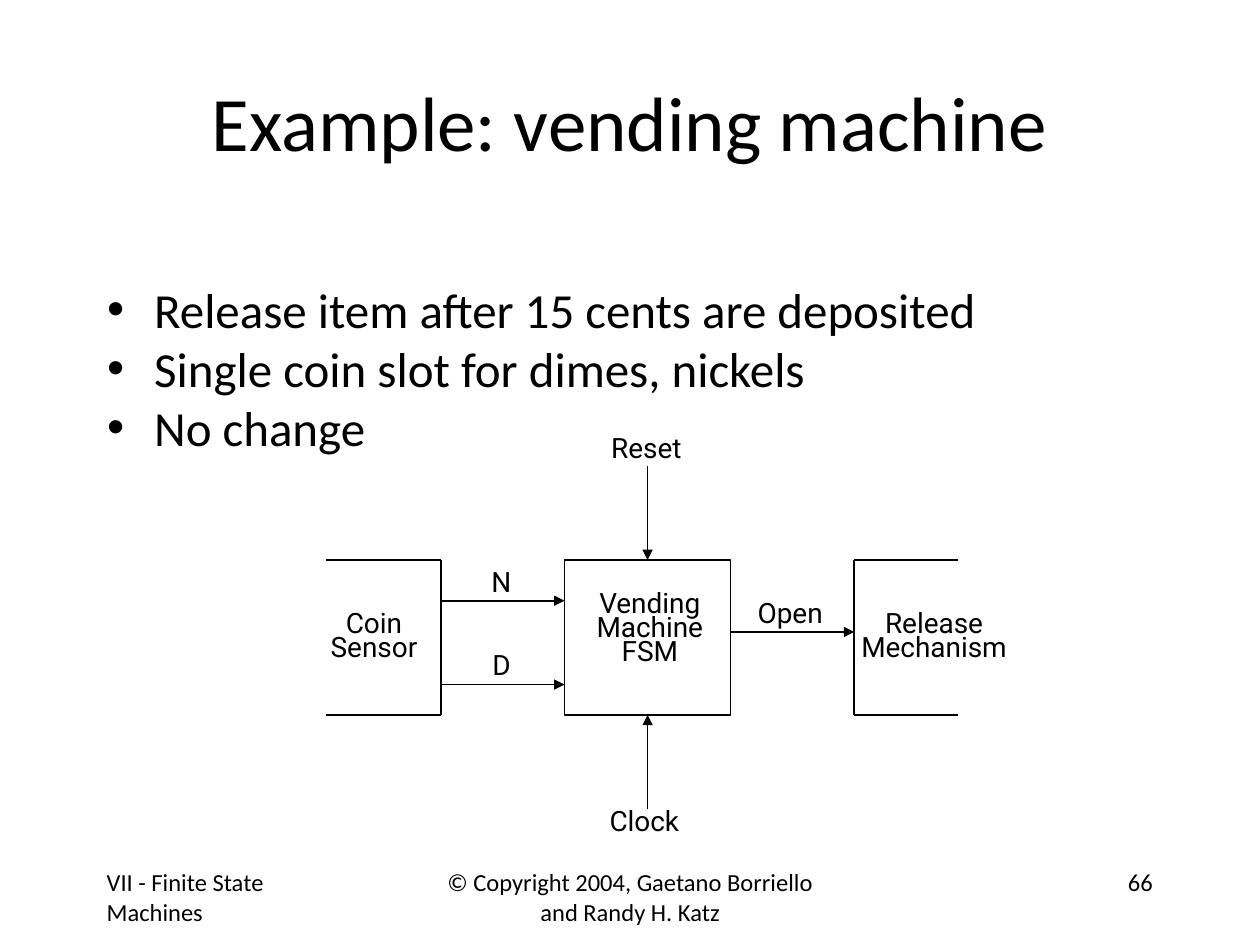
from lxml.etree import SubElement
from pptx import Presentation
from pptx.dml.color import RGBColor
from pptx.enum.shapes import MSO_CONNECTOR, MSO_SHAPE
from pptx.enum.text import MSO_ANCHOR as Anchor, PP_ALIGN as Align
from pptx.oxml.ns import qn
from pptx.util import Cm, Pt

BLACK = "000000"

# Diagram grid, in cm
TOP, BOTTOM = 11.29, 14.41
SENSOR_LEFT, SENSOR_RIGHT = 6.58, 8.89
FSM_LEFT, FSM_RIGHT = 11.38, 14.73
RELEASE_LEFT, RELEASE_RIGHT = 17.22, 19.31
FSM_CENTER = (FSM_LEFT + FSM_RIGHT) / 2


def color(hex_code):
    return RGBColor.from_string(hex_code)


def add_text(page, text, left, top, width, height, size=14, font="Calibri",
             align=Align.LEFT, anchor=Anchor.TOP, wrap=True, insets=None,
             spacing=None, bullet=False):
    """Add a text box; each line of text is a paragraph, \\v breaks a line."""
    box = page.shapes.add_textbox(Cm(left), Cm(top), Cm(width), Cm(height))
    frame = box.text_frame
    frame.word_wrap = wrap
    frame.vertical_anchor = anchor
    if insets:
        frame.margin_left = frame.margin_right = Cm(insets[0])
        frame.margin_top = frame.margin_bottom = Cm(insets[1])
    frame.text = text
    for para in frame.paragraphs:
        para.alignment = align
        if spacing:
            para.line_spacing = Pt(spacing)
        if bullet:
            add_bullet(para)
        for span in para.runs:
            span.font.size = Pt(size)
            span.font.name = font
            span.font.color.rgb = color(BLACK)


def add_bullet(para):
    props = para._p.get_or_add_pPr()
    indent = Cm(0.95)
    props.set("marL", str(indent))
    props.set("indent", str(-indent))
    SubElement(props, qn("a:buFont"), typeface="Arial")
    SubElement(props, qn("a:buChar"), char="•")


def add_label(page, text, center, top, width, height=0.91):
    add_text(page, text, center - width / 2, top, width, height, size=16,
             font="Roboto", align=Align.CENTER, wrap=False,
             insets=(0.05, 0.08), spacing=13.8)


def add_line(page, start, end, arrow=False):
    line = page.shapes.add_connector(
        MSO_CONNECTOR.STRAIGHT, *(Cm(value) for value in (*start, *end)))
    line.line.color.rgb = color(BLACK)
    line.line.width = Pt(1)
    if arrow:
        SubElement(line.line._get_or_add_ln(), qn("a:tailEnd"), type="triangle")
    SubElement(line._element.spPr, qn("a:effectLst"))


def add_open_box(page, closed_x, open_x):
    """Draw a box that lacks the side at open_x."""
    add_line(page, (closed_x, TOP), (closed_x, BOTTOM))
    for y in (TOP, BOTTOM):
        add_line(page, (closed_x, y), (open_x, y))


def add_machine(page):
    box = page.shapes.add_shape(
        MSO_SHAPE.RECTANGLE, Cm(FSM_LEFT), Cm(TOP),
        Cm(FSM_RIGHT - FSM_LEFT), Cm(BOTTOM - TOP))
    box.shadow.inherit = False
    box.fill.background()
    box.line.color.rgb = color(BLACK)
    box.line.width = Pt(1)


def add_diagram(page):
    for label in (
        ("Vending\vMachine\vFSM", 13.1, 11.91, 2.5, 1.88),
        ("N", 10.11, 11.49, 0.81),
        ("D", 10.11, 13.16, 0.81),
        ("Reset", 13.03, 8.78, 1.7),
        ("Clock", 12.99, 16.3, 1.7),
        ("Open", 15.93, 12.12, 1.7),
        ("Coin\vSensor", 7.54, 12.32, 2.1, 1.4),
        ("Release\vMechanism", 18.83, 12.32, 3.3, 1.4),
    ):
        add_label(page, *label)

    add_machine(page)
    add_open_box(page, RELEASE_LEFT, RELEASE_RIGHT)
    add_open_box(page, SENSOR_RIGHT, SENSOR_LEFT)

    for start, end in (
        ((FSM_RIGHT, 12.74), (RELEASE_LEFT, 12.74)),
        ((SENSOR_RIGHT, 12.11), (FSM_LEFT, 12.11)),
        ((SENSOR_RIGHT, 13.8), (FSM_LEFT, 13.8)),
        ((FSM_CENTER, 9.4), (FSM_CENTER, TOP)),
        ((FSM_CENTER, 16.31), (FSM_CENTER, BOTTOM)),
    ):
        add_line(page, start, end, arrow=True)


def add_footer(page):
    for text, left, width, align in (
        ("VII - Finite State Machines", 1.9, 5.29, Align.LEFT),
        ("© Copyright 2004, Gaetano Borriello and Randy H. Katz",
         8.68, 8.05, Align.CENTER),
        ("66", 18.2, 5.29, Align.RIGHT),
    ):
        add_text(page, text, left, 17.36, width, 1.27, align=align)


def main():
    deck = Presentation()
    deck.slide_width, deck.slide_height = Cm(25.4), Cm(19.05)
    page = deck.slides.add_slide(deck.slide_layouts[6])

    add_footer(page)
    add_text(page, "Example: vending machine", 1.9, 0.85, 21.59, 3.18,
             size=44, align=Align.CENTER, anchor=Anchor.MIDDLE)
    add_text(page, "Release item after 15 cents are deposited\n"
                   "Single coin slot for dimes, nickels\n"
                   "No change",
             1.91, 5.51, 21.59, 11.43, size=28, bullet=True)
    add_diagram(page)

    deck.save("out.pptx")


if __name__ == "__main__":
    main()
